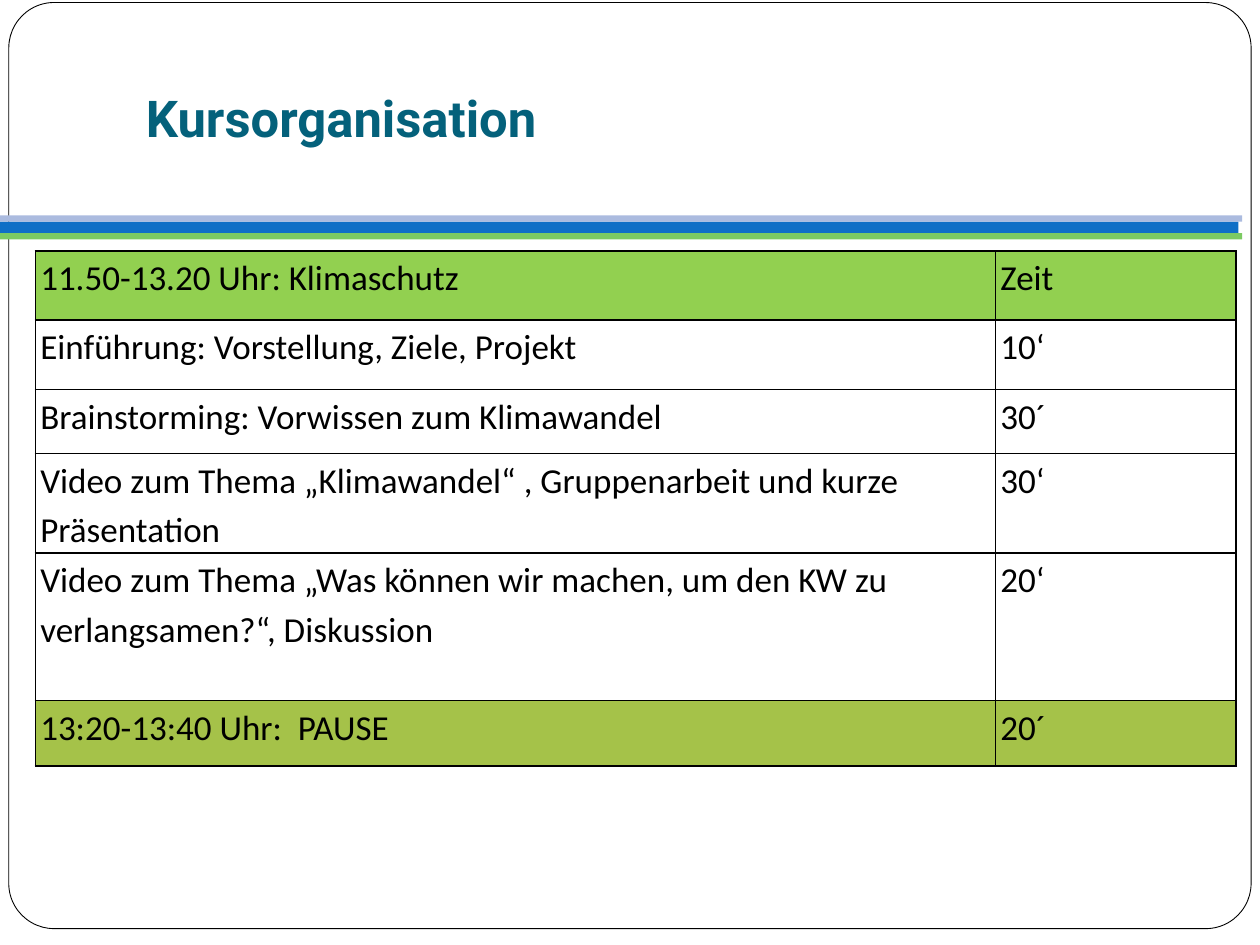
from lxml import etree
from pptx import Presentation
from pptx.dml.color import RGBColor
from pptx.enum.shapes import MSO_SHAPE
from pptx.enum.text import MSO_ANCHOR, PP_ALIGN
from pptx.oxml.ns import qn
from pptx.util import Inches, Pt

RECT, ROUNDED = MSO_SHAPE.RECTANGLE, MSO_SHAPE.ROUNDED_RECTANGLE
MIDDLE, TOP, CENTER = MSO_ANCHOR.MIDDLE, MSO_ANCHOR.TOP, PP_ALIGN.CENTER
TITLE_ONLY = 5

COLORS = {
    "white": "FFFFFF", "black": "000000", "title": "04617B",
    "blue": "0F6FC6", "lavender": "ABBBDF", "green": "7CCA62",
    "header": "92D050", "break": "A5C249",
}

# Activity, time, row height, fill
AGENDA = [
    ("11.50-13.20 Uhr: Klimaschutz", "Zeit", 0.55, "header"),
    ("Einführung: Vorstellung, Ziele, Projekt", "10‘", 0.55, None),
    ("Brainstorming: Vorwissen zum Klimawandel", "30´", 0.51, None),
    ("Video zum Thema „Klimawandel“ , Gruppenarbeit und kurze Präsentation",
     "30‘", 0.79, None),
    ("Video zum Thema „Was können wir machen, um den KW zu verlangsamen?“, "
     "Diskussion", "20‘", 1.17, None),
    ("13:20-13:40 Uhr:  PAUSE", "20´", 0.52, "break"),
]
COLUMN_WIDTHS = (7.62, 1.91)


def color(name):
    return RGBColor.from_string(COLORS[name])


def add_box(slide, kind, box, fill):
    sp = slide.shapes.add_shape(kind, *map(Inches, box))
    sp.shadow.inherit = False
    sp.fill.solid()
    sp.fill.fore_color.rgb = color(fill)
    sp.line.fill.background()
    return sp


def add_frame(slide, box):
    sp = add_box(slide, ROUNDED, box, "white")
    sp.adjustments[0] = 0.049
    sp.line.color.rgb = color("black")
    sp.line.width = Pt(0.5)


def add_stripes(slide, left, top, width):
    """Wide blue bar between two thin ones."""
    add_box(slide, RECT, (left - 0.03, top + 0.05, width, 0.1), "blue")
    add_box(slide, RECT, (left, top, width, 0.05), "lavender")
    add_box(slide, RECT, (left, top + 0.14, width, 0.05), "green")


def place_title(slide, box, text):
    sp = slide.shapes.title
    sp.left, sp.top, sp.width, sp.height = map(Inches, box)
    slide.shapes._spTree.append(sp._element)  # in front of the frame
    tf = sp.text_frame
    tf.text = text
    tf.word_wrap = True
    tf.vertical_anchor = MIDDLE
    tf.margin_left = tf.margin_right = tf.margin_bottom = Inches(0.1)
    tf.margin_top = Inches(0.05)
    p = tf.paragraphs[0]
    p.alignment = CENTER
    p.font.name, p.font.size, p.font.bold = "Roboto", Pt(29), True
    p.font.color.rgb = color("title")


def add_borders(cell):
    tcPr = cell._tc.get_or_add_tcPr()
    for i, side in enumerate(("a:lnL", "a:lnR", "a:lnT", "a:lnB")):
        ln = etree.Element(qn(side), w=str(Pt(1)))
        fill = etree.SubElement(ln, qn("a:solidFill"))
        etree.SubElement(fill, qn("a:srgbClr"), val=COLORS["black"])
        tcPr.insert(i, ln)


def fill_cell(cell, text, fill):
    cell.text = text
    cell.vertical_anchor = TOP
    cell.margin_left = cell.margin_right = Inches(0.04)
    cell.margin_top = cell.margin_bottom = 0
    if fill:
        cell.fill.solid()
        cell.fill.fore_color.rgb = color(fill)
    else:
        cell.fill.background()
    p = cell.text_frame.paragraphs[0]
    p.line_spacing = 1.15
    p.font.name, p.font.size = "Calibri", Pt(20)
    p.font.color.rgb = color("black")
    add_borders(cell)


def add_agenda(slide, left, top):
    width, height = sum(COLUMN_WIDTHS), sum(row[2] for row in AGENDA)
    table = slide.shapes.add_table(
        len(AGENDA), len(COLUMN_WIDTHS),
        *map(Inches, (left, top, width, height))).table
    table.first_row = table.horz_banding = False
    for column, column_width in zip(table.columns, COLUMN_WIDTHS):
        column.width = Inches(column_width)
    for row, (activity, time, row_height, fill) in zip(table.rows, AGENDA):
        row.height = Inches(row_height)
        for cell, text in zip(row.cells, (activity, time)):
            fill_cell(cell, text, fill)


def main():
    prs = Presentation()
    prs.slide_width, prs.slide_height = Inches(10), Inches(7.5)
    slide = prs.slides.add_slide(prs.slide_layouts[TITLE_ONLY])

    # Backdrop
    add_frame(slide, (0.07, 0.02, 9.86, 7.35))
    add_stripes(slide, 0, 1.71, 9.86)

    # Content
    place_title(slide, (0.35, 0.21, 4.72, 1.49), "Kursorganisation")
    add_agenda(slide, 0.28, 1.99)
    prs.save("out.pptx")


if __name__ == "__main__":
    main()
